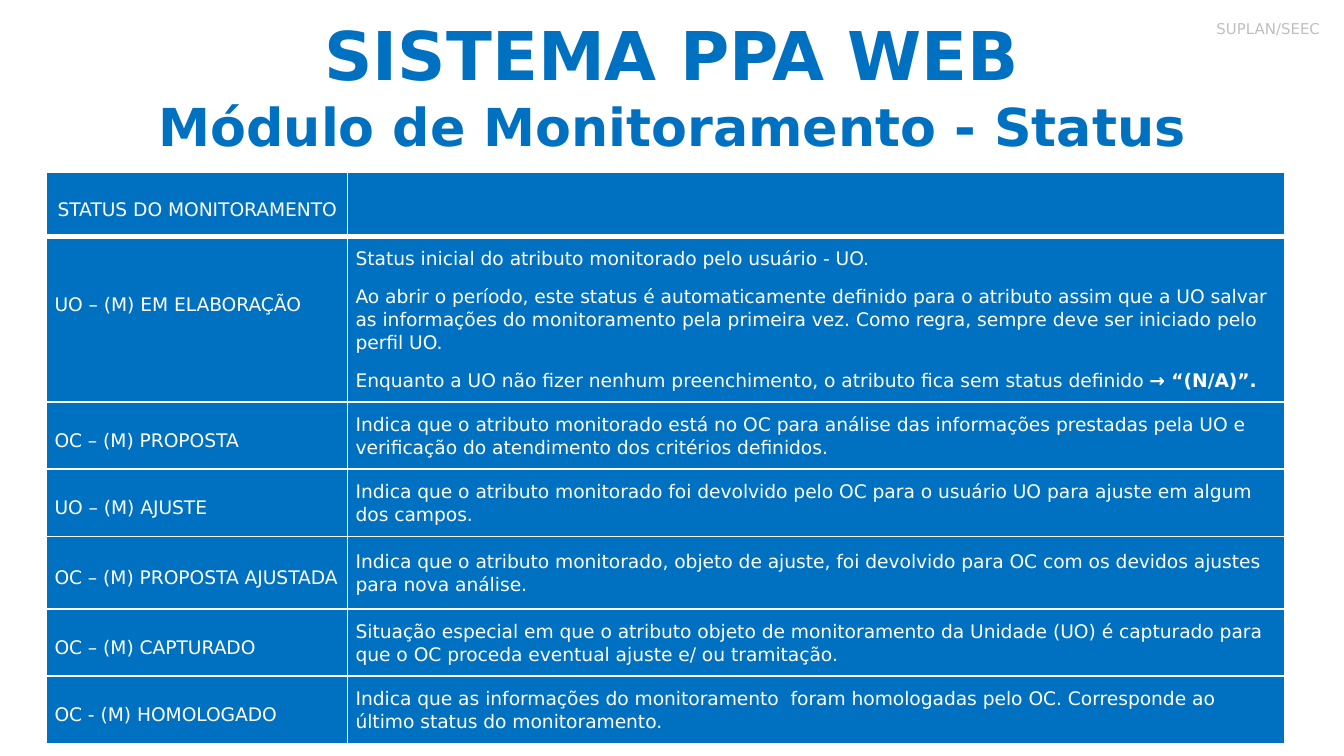
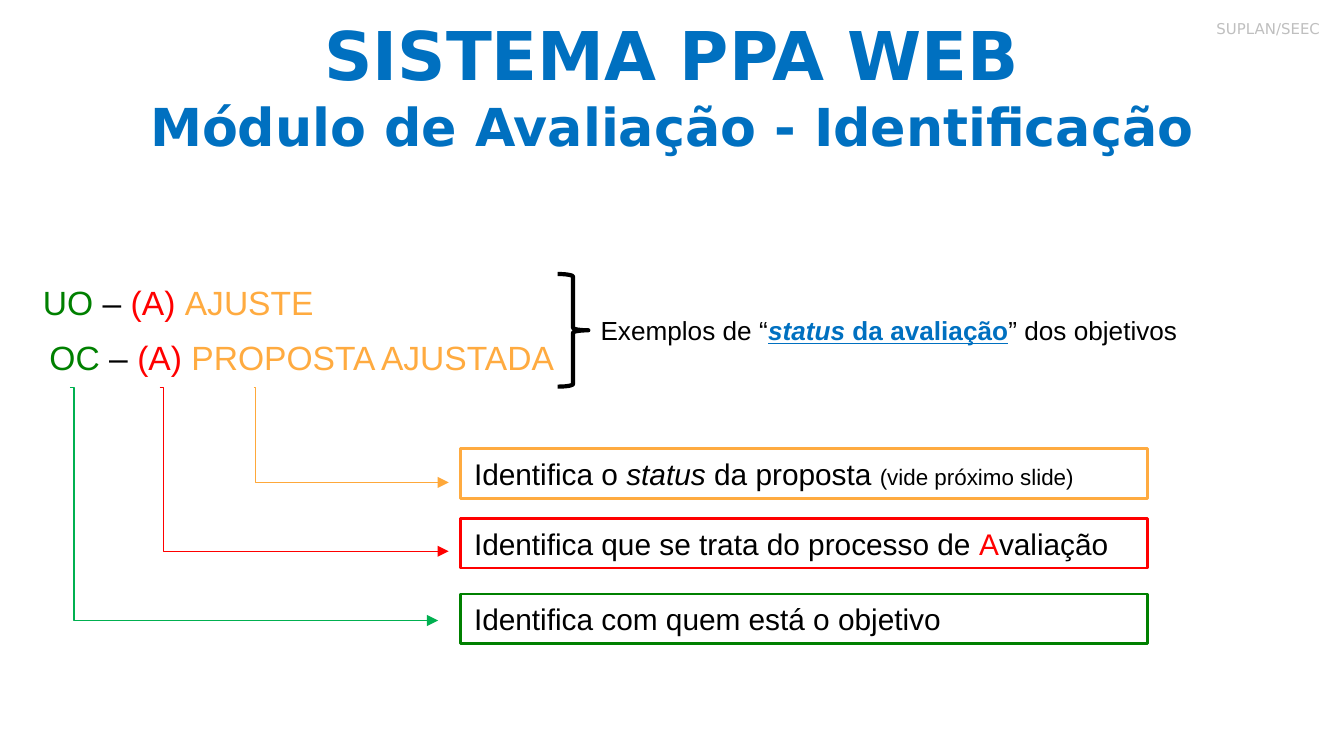
from typing import NamedTuple

from lxml.etree import SubElement as Sub
from pptx import Presentation
from pptx.dml.color import RGBColor as Rgb
from pptx.enum.shapes import MSO_CONNECTOR as Link, MSO_SHAPE as Form
from pptx.enum.text import MSO_ANCHOR as Anchor, PP_ALIGN as Align
from pptx.oxml.ns import qn
from pptx.util import Cm, Pt

COLORS = {
    "blue": "0070C0", "white": "FFFFFF", "black": "000000", "gray": "BFBFBF",
    "green": "008000", "red": "FF0000", "orange": "FFAB40",
    "green_arrow": "00B050", "orange_arrow": "FEA83A",
}
SANS, ARIAL = "DejaVu Sans", "Arial"
ROW_HEIGHTS = [1.21, 3.13, 1.27, 1.27, 1.37, 1.27, 1.27]
STATUS_ROWS = [
    ("STATUS DO MONITORAMENTO", Align.CENTER, []),
    ("UO – (M) EM ELABORAÇÃO", Align.LEFT, [
        "Status inicial do atributo monitorado pelo usuário - UO. ",
        "Ao abrir o período, este status é automaticamente definido para o atributo assim que a UO "
        "salvar as informações do monitoramento pela primeira vez. Como regra, sempre deve ser "
        "iniciado pelo perfil UO. ",
        ["Enquanto a UO não fizer nenhum preenchimento, o atributo fica sem status definido ",
         ("→ “(N/A)”.", {"bold": True})],
    ]),
    ("OC – (M) PROPOSTA", Align.JUSTIFY, [
        "Indica que o atributo monitorado está no OC para análise das informações prestadas pela UO "
        "e verificação do atendimento dos critérios definidos."]),
    ("UO – (M) AJUSTE", Align.JUSTIFY, [
        "Indica que o atributo monitorado foi devolvido pelo OC para o usuário UO para ajuste em "
        "algum dos campos."]),
    ("OC – (M) PROPOSTA AJUSTADA", Align.LEFT, [
        "Indica que o atributo monitorado, objeto de ajuste, foi devolvido para OC com os devidos "
        "ajustes para nova análise."]),
    ("OC – (M) CAPTURADO", Align.JUSTIFY, [
        "Situação especial em que o atributo objeto de monitoramento da Unidade (UO) é capturado "
        "para que o OC proceda eventual ajuste e/ ou tramitação."]),
    ("OC - (M) HOMOLOGADO", Align.JUSTIFY, [
        "Indica que as informações do monitoramento  foram homologadas pelo OC. Corresponde ao "
        "último status do monitoramento."]),
]


class Box(NamedTuple):
    """A rectangle in centimetres."""
    left: float
    top: float
    width: float
    height: float

    def inner(self, left, top, width, height):
        """Return a box placed relative to this one."""
        return Box(self.left + left, self.top + top, width, height)

    def lengths(self):
        """Return the four measures as lengths."""
        return [Cm(value) for value in self]


def color(name):
    """Return a palette colour."""
    return Rgb.from_string(COLORS[name])


def write(frame, paragraphs, *, align=Align.LEFT, spacing=None, after=None, **base):
    """Fill a frame with paragraphs of plain or formatted spans."""
    for index, spans in enumerate(paragraphs):
        para = frame.add_paragraph() if index else frame.paragraphs[0]
        para.alignment = align
        para.line_spacing = spacing
        para.space_after = None if after is None else Pt(after)
        for span in [spans] if isinstance(spans, str) else spans:
            text, changes = (span, {}) if isinstance(span, str) else span
            if text == "\n":
                para.add_line_break()
                continue
            style = {**base, **changes}
            run = para.add_run()
            run.text = text
            run.font.name = style["font"]
            run.font.size = Pt(style["size"])
            run.font.color.rgb = color(style["color"])
            for key in ("bold", "italic", "underline"):
                setattr(run.font, key, style.get(key, False))


def add_text(page, box, paragraphs, inset=None, **style):
    """Add a wrapping text box."""
    frame = page.shapes.add_textbox(*box.lengths()).text_frame
    frame.word_wrap = True
    if inset is not None:
        frame.margin_left = frame.margin_right = Cm(inset)
        frame.margin_top = frame.margin_bottom = Cm(inset)
    write(frame, paragraphs, **style)


def add_outline(page, form, box, line, width):
    """Add an unfilled preset shape."""
    shape = page.shapes.add_shape(form, *box.lengths())
    shape.shadow.inherit = False
    shape.fill.background()
    shape.line.color.rgb = color(line)
    shape.line.width = Pt(width)
    return shape


def add_elbow(page, box, line, bend):
    """Add a bent arrow from the top left to the bottom right of its box."""
    left, top, width, height = box.lengths()
    arrow = page.shapes.add_connector(Link.ELBOW, left, top, left + width, top + height)
    arrow.line.color.rgb = color(line)
    arrow.line.width = Pt(0.75)
    properties = arrow.element.spPr
    guides = properties.find(qn("a:prstGeom")).find(qn("a:avLst"))
    Sub(guides, qn("a:gd"), name="adj1", fmla=f"val {bend}")
    Sub(properties.find(qn("a:ln")), qn("a:tailEnd"), type="triangle")
    Sub(properties, qn("a:effectLst"))


def format_cell(cell, bottom):
    """Give a cell its borders, fill and margins."""
    properties = cell._tc.get_or_add_tcPr()
    for side, width in (("L", 1), ("R", 1), ("T", 1), ("B", bottom)):
        border = Sub(properties, qn(f"a:ln{side}"), w=str(Pt(width)))
        Sub(Sub(border, qn("a:solidFill")), qn("a:srgbClr"), val=COLORS["white"])
    cell.fill.solid()
    cell.fill.fore_color.rgb = color("blue")
    cell.vertical_anchor = Anchor.MIDDLE
    cell.margin_left = cell.margin_right = Cm(0.15)
    cell.margin_top = cell.margin_bottom = 0


def add_heading(page, box, subtitle):
    """Add the two-line title and the corner tag."""
    add_text(page, box, [["SISTEMA PPA WEB", "\n", (subtitle, {"size": 28})]], inset=0.25,
             align=Align.CENTER, font=SANS, size=36, color="blue", bold=True)
    add_text(page, Box(21.06, 0.2, 4.14, 1.14), ["SUPLAN/SEEC"], inset=0.25,
             align=Align.RIGHT, font=SANS, size=8, color="gray")


def add_status_table(page, box):
    """Add the table that explains each status."""
    table = page.shapes.add_table(len(STATUS_ROWS), 2, *box.lengths()).table
    table.first_row = table.horz_banding = False
    label_width = 5.69
    table.columns[0].width = Cm(label_width)
    table.columns[1].width = Cm(box.width - label_width)
    style = {"font": SANS, "size": 10, "color": "white", "after": 8}
    for index, (label, align, details) in enumerate(STATUS_ROWS):
        table.rows[index].height = Cm(ROW_HEIGHTS[index])
        label_cell, detail_cell = table.cell(index, 0), table.cell(index, 1)
        for cell in (label_cell, detail_cell):
            format_cell(cell, bottom=1 if index else 3)
        write(label_cell.text_frame, [label], align=align, spacing=1.5, **style)
        write(detail_cell.text_frame, details, spacing=1.07, **style)
    table.cell(1, 0).margin_bottom = Cm(0.75)


def add_examples(page, box):
    """Add the two sample statuses, the brace and its note."""
    samples = [("UO", "AJUSTE", box.inner(-0.58, 0.03, 7.9, 1.63)),
               ("OC", "PROPOSTA AJUSTADA", box.inner(0.56, 1.07, 10.29, 1.63))]
    for owner, status, place in samples:
        spans = [(owner, {"color": "green"}), " – ", ("(A) ", {"color": "red"}),
                 (status, {"color": "orange"})]
        add_text(page, place, [spans], align=Align.CENTER, font=ARIAL, size=18, color="black")
    add_outline(page, Form.RIGHT_BRACE, box.inner(10.54, 0, 0.58, box.height), "black", 2.25)
    strong = {"color": "blue", "bold": True, "underline": True}
    note = ["Exemplos de “", ("status ", {**strong, "italic": True}),
            ("da avaliação", strong), "” dos objetivos"]
    add_text(page, box.inner(11.1, 0.64, 12.01, 0.86), [note],
             font=ARIAL, size=14, color="black")


def add_legend(page, box):
    """Add the framed explanations and the arrows that lead to them."""
    entries = [
        ("orange", "orange_arrow", 1.16, (3.48, 3.68, 1.8), 700,
         ["Identifica o ", ("status ", {"italic": True}), "da proposta ",
          ("(vide próximo slide)", {"size": 12})]),
        ("red", "red", 2.48, (1.7, 5.46, 3.1), 1400,
         ["Identifica que se trata do processo de ", ("A", {"color": "red"}), "valiação"]),
        ("green", "green_arrow", 3.91, (0, 6.96, 4.41), 1100,
         ["Identifica com quem está o objetivo"]),
    ]
    for frame_color, arrow_color, top, (start, width, drop), bend, spans in entries:
        add_elbow(page, box.inner(start, 0, width, drop), arrow_color, bend)
        place = box.inner(7.39, top, box.width - 7.39, 0.94)
        frame = add_outline(page, Form.RECTANGLE, place, frame_color, 1.5).text_frame
        frame.word_wrap = True
        write(frame, [spans], font=ARIAL, size=16, color="black")


def main():
    """Build and save the deck."""
    deck = Presentation()
    deck.slide_width, deck.slide_height = Cm(25.4), Cm(14.29)
    blank = deck.slide_layouts[6]

    page = deck.slides.add_slide(blank)
    add_heading(page, Box(0, 0, 25.4, 3.25), "Módulo de Monitoramento - Status")
    add_status_table(page, Box(0.88, 3.26, 23.41, 10.79))

    page = deck.slides.add_slide(blank)
    add_heading(page, Box(0.86, 0, 23.67, 1.6), "Módulo de Avaliação - Identificação")
    add_examples(page, Box(0, 5.18, 25.4, 2.13))
    add_legend(page, Box(1.32, 7.32, 20.37, 4.85))

    deck.save("out.pptx")


if __name__ == "__main__":
    main()
